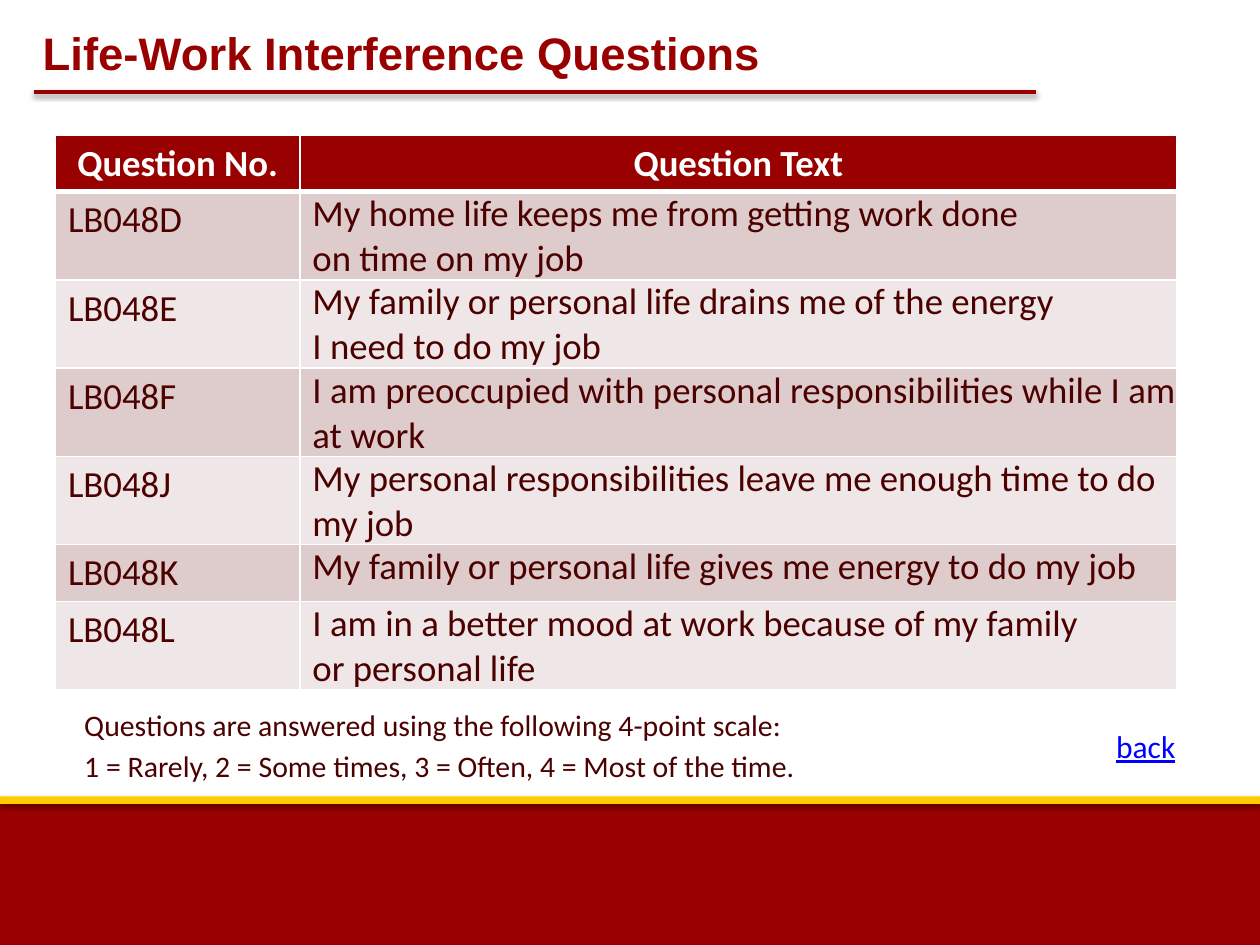
import lxml.etree
import pptx
import pptx.dml.color
import pptx.enum.shapes
import pptx.enum.text
import pptx.oxml
import pptx.oxml.ns
import pptx.util
from pptx.util import Inches

DARK_RED, GOLD, WHITE, TEXT = "990000", "FFCC00", "FFFFFF", "4C0000"
BANDS = ("DECCCC", "EFE7E7")
ALIGN = pptx.enum.text.PP_ALIGN
QUESTIONS = [
    ("LB048D", ["My home life keeps me from getting work done", "on time on my job"]),
    ("LB048E", ["My family or personal life drains me of the energy", "I need to do my job"]),
    ("LB048F", ["I am preoccupied with personal responsibilities while I am at work"]),
    ("LB048J", ["My personal responsibilities leave me enough time to do my job"]),
    ("LB048K", ["My family or personal life gives me energy to do my job"]),
    ("LB048L", ["I am in a better mood at work because of my family", "or personal life"]),
]


def color(hex_string):
    return pptx.dml.color.RGBColor.from_string(hex_string)


def add_shadow(shape, opacity, distance):
    """Give the shape a soft black shadow that falls straight down."""
    properties = shape._element.spPr
    for old in properties.findall(pptx.oxml.ns.qn("a:effectLst")):
        properties.remove(old)
    properties.append(pptx.oxml.parse_xml(
        f'<a:effectLst {pptx.oxml.ns.nsdecls("a")}>'
        f'<a:outerShdw blurRad="{pptx.util.Pt(3.1)}" dist="{pptx.util.Pt(distance)}" '
        f'dir="5400000" rotWithShape="0"><a:srgbClr val="000000">'
        f'<a:alpha val="{opacity * 1000}"/></a:srgbClr></a:outerShdw></a:effectLst>'))


def add_run(paragraph, text, size, hex_string, font="Calibri", bold=False, underline=False):
    run = paragraph.add_run()
    run.text = text
    run.font.size = pptx.util.Pt(size)
    run.font.name = font
    run.font.bold = bold
    run.font.underline = underline
    run.font.color.rgb = color(hex_string)


def add_text_box(slide, left, top, width, height):
    frame = slide.shapes.add_textbox(left, top, width, height).text_frame
    frame.word_wrap = True
    return frame


def add_band(slide, left, top, width, height, hex_string, opacity, distance):
    band = slide.shapes.add_shape(
        pptx.enum.shapes.MSO_SHAPE.RECTANGLE, left, top, width, height)
    band.fill.solid()
    band.fill.fore_color.rgb = color(hex_string)
    band.line.fill.background()
    add_shadow(band, opacity, distance)


def add_footer(slide, left, top, width, height):
    stripe = Inches(0.06)
    add_band(slide, left, top + Inches(0.03), width, height - Inches(0.03), DARK_RED, 35, 1.8)
    add_band(slide, left, top, width, stripe, GOLD, 38, 1.6)


def add_title(slide, left, top, width, height):
    frame = add_text_box(slide, left, top, width, height)
    frame.vertical_anchor = pptx.enum.text.MSO_ANCHOR.MIDDLE
    add_run(frame.paragraphs[0], "Life-Work Interference Questions", 26, DARK_RED, "Arial", True)
    rule_y = top + Inches(0.68)
    rule_left = left + Inches(0.03)
    rule = slide.shapes.add_connector(
        pptx.enum.shapes.MSO_CONNECTOR.STRAIGHT,
        rule_left + Inches(7.95), rule_y, rule_left, rule_y)
    rule.line.color.rgb = color(DARK_RED)
    rule.line.width = pptx.util.Pt(2)
    add_shadow(rule, 38, 1.6)


def style_cell(cell, hex_string, top=1, bottom=1):
    """Draw white borders, with top and bottom widths in points, and fill the cell."""
    properties = cell._tc.get_or_add_tcPr()
    for side, points in (("L", 1), ("R", 1), ("T", top), ("B", bottom)):
        border = lxml.etree.SubElement(
            properties, pptx.oxml.ns.qn(f"a:ln{side}"), w=str(pptx.util.Pt(points)))
        fill = lxml.etree.SubElement(border, pptx.oxml.ns.qn("a:solidFill"))
        lxml.etree.SubElement(fill, pptx.oxml.ns.qn("a:srgbClr"), val=WHITE)
    cell.fill.solid()
    cell.fill.fore_color.rgb = color(hex_string)


def add_question_table(slide, left, top, width, height):
    frame = slide.shapes.add_table(len(QUESTIONS) + 1, 2, left, top, width, height)
    table = frame.table
    table.columns[0].width = Inches(1.94)
    table.columns[1].width = width - Inches(1.94)
    for row in table.rows:
        row.height = Inches(0.41)
    frame.height = height

    for column, heading in enumerate(("Question No.", "Question Text")):
        cell = table.cell(0, column)
        style_cell(cell, DARK_RED, bottom=3)
        paragraph = cell.text_frame.paragraphs[0]
        paragraph.alignment = ALIGN.CENTER
        add_run(paragraph, heading, 21, WHITE, bold=True)

    for row, (number, lines) in enumerate(QUESTIONS, start=1):
        number_cell, text_cell = table.cell(row, 0), table.cell(row, 1)
        for cell in (number_cell, text_cell):
            style_cell(cell, BANDS[(row - 1) % 2], top=3 if row == 1 else 1)
        add_run(number_cell.text_frame.paragraphs[0], number, 21, TEXT)
        text_cell.margin_left = Inches(0.1)
        text_cell.margin_top = text_cell.margin_right = text_cell.margin_bottom = 0
        text_frame = text_cell.text_frame
        for index, line in enumerate(lines):
            paragraph = text_frame.add_paragraph() if index else text_frame.paragraphs[0]
            add_run(paragraph, line, 21, TEXT)


def add_scale_note(slide, left, top, width, height):
    frame = add_text_box(slide, left, top, width, height)
    first, second = frame.paragraphs[0], frame.add_paragraph()
    first.space_after = pptx.util.Pt(3)
    second.space_after = pptx.util.Pt(12)
    add_run(first, "Questions are answered using the following 4-point scale:", 17, TEXT)
    add_run(second, "1 = Rarely, 2 = Some times, 3 = Often, 4 = Most of the time.", 17, TEXT)


def add_back_label(slide, left, top, width, height):
    frame = add_text_box(slide, left, top, width, height)
    add_run(frame.paragraphs[0], "back", 18, "0000FF", underline=True)


def main():
    presentation = pptx.Presentation()
    presentation.slide_width, presentation.slide_height = Inches(10), Inches(7.5)
    slide = presentation.slides.add_slide(presentation.slide_layouts[6])
    slide.background.fill.solid()
    slide.background.fill.fore_color.rgb = color(WHITE)
    add_footer(slide, 0, Inches(6.32), Inches(10), Inches(1.18))
    add_title(slide, Inches(0.24), Inches(0.05), Inches(6), Inches(0.73))
    add_question_table(slide, Inches(0.44), Inches(1.07), Inches(8.9), Inches(4.4))
    add_scale_note(slide, Inches(0.57), Inches(5.56), Inches(9.41), Inches(0.72))
    add_back_label(slide, Inches(8.76), Inches(5.72), Inches(1.78), Inches(0.4))
    presentation.save("out.pptx")


if __name__ == "__main__":
    main()
